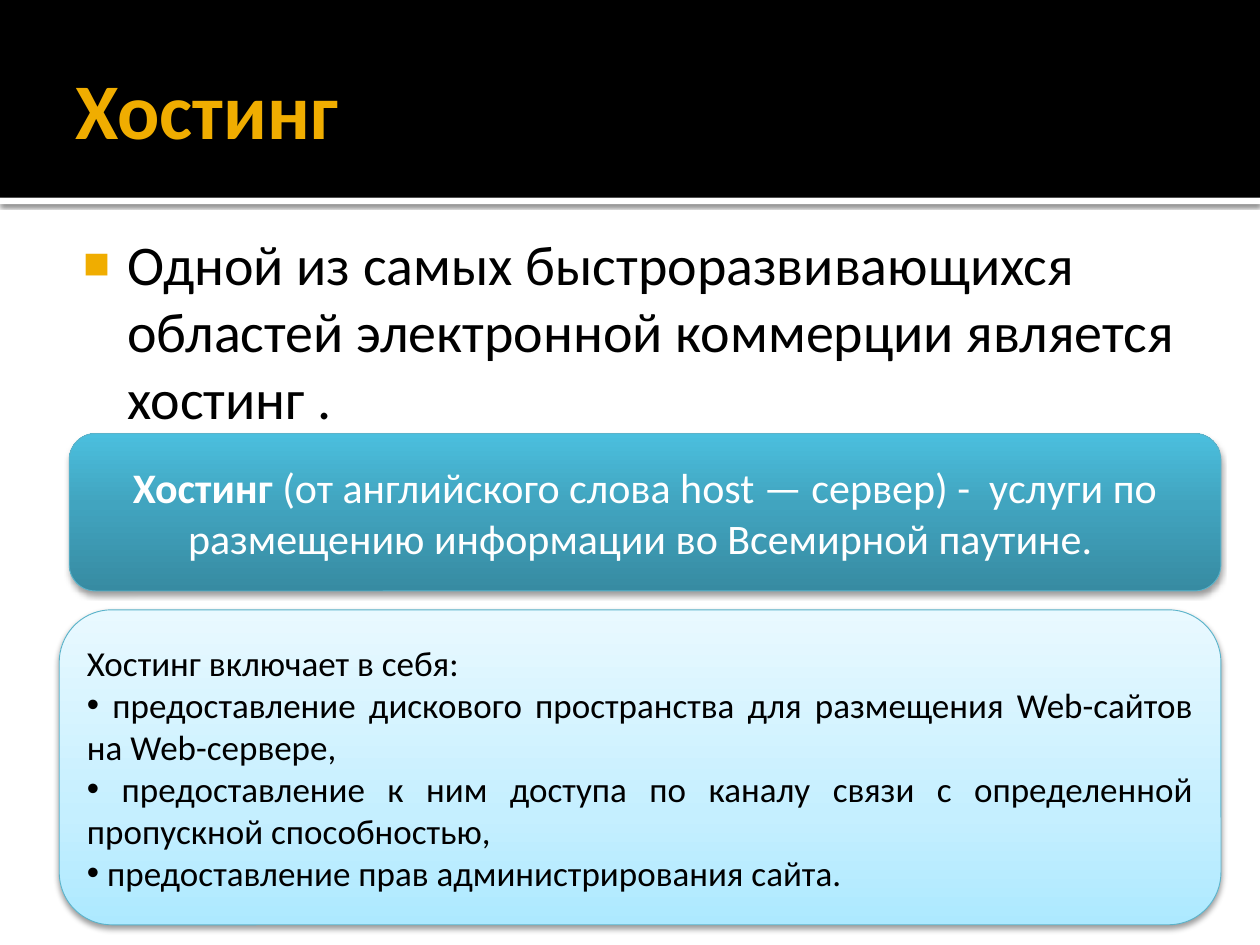
from lxml import etree
from pptx import Presentation
from pptx.dml.color import RGBColor
from pptx.enum.shapes import MSO_SHAPE
from pptx.enum.text import MSO_ANCHOR, MSO_AUTO_SIZE, PP_ALIGN
from pptx.oxml.ns import qn
from pptx.util import Inches, Pt

RECTANGLE = MSO_SHAPE.RECTANGLE
ROUNDED = MSO_SHAPE.ROUNDED_RECTANGLE
MIDDLE, TOP = MSO_ANCHOR.MIDDLE, MSO_ANCHOR.TOP
LEFT, CENTER, JUSTIFY = PP_ALIGN.LEFT, PP_ALIGN.CENTER, PP_ALIGN.JUSTIFY
NO_AUTOFIT = MSO_AUTO_SIZE.NONE
GOLD, BLACK, WHITE = "F0AD00", "000000", "FFFFFF"


def add_text(paragraph, text, size, color, bold=False, align=LEFT, bullet=None):
    paragraph.alignment = align
    paragraph.space_before = Pt(0)
    run = paragraph.add_run()
    run.text = text
    run.font.name = "Calibri"
    run.font.size = Pt(size)
    run.font.bold = bold
    run.font.color.rgb = RGBColor.from_string(color)
    if bullet:
        properties = paragraph._p.get_or_add_pPr()
        etree.SubElement(properties, qn("a:buFont"), typeface="Arial")
        etree.SubElement(properties, qn("a:buChar"), char=bullet)


def add_shadow(shape, opacity, blur, distance):
    shape.shadow.inherit = False
    effects = shape._element.spPr.find(qn("a:effectLst"))
    shadow = etree.SubElement(effects, qn("a:outerShdw"), blurRad=str(Pt(blur)),
                              dist=str(Pt(distance)), dir="5400000", rotWithShape="0")
    color = etree.SubElement(shadow, qn("a:srgbClr"), val=BLACK)
    etree.SubElement(color, qn("a:alpha"), val=str(opacity * 1000))


presentation = Presentation()
presentation.slide_width = Inches(10)
presentation.slide_height = Inches(7.5)
slide = presentation.slides.add_slide(presentation.slide_layouts[1])
shapes = slide.shapes

bands = []
for top, height, color in [(1.57, 0.05, WHITE), (0, 1.57, BLACK)]:
    band = shapes.add_shape(RECTANGLE, 0, Inches(top), Inches(10), Inches(height))
    band.fill.solid()
    band.fill.fore_color.rgb = RGBColor.from_string(color)
    band.line.fill.background()
    band.shadow.inherit = False
    bands.append(band)
add_shadow(bands[0], 60, 2.5, 0.8)
for band in reversed(bands):
    shapes._spTree.insert(2, band._element)

title, body = shapes.title, slide.placeholders[1]
for placeholder, box, insets, anchor in [
    (title, (0.5, 0.17, 9, 1.37), (0.1, 0.05, 0.05, 0.05), MIDDLE),
    (body, (0.47, 1.72, 9, 1.89), (0.06, 0.1, 0.1, 0.05), TOP),
]:
    placeholder.left, placeholder.top, placeholder.width, placeholder.height = map(Inches, box)
    frame = placeholder.text_frame
    frame.margin_left, frame.margin_top, frame.margin_right, frame.margin_bottom = map(Inches, insets)
    frame.vertical_anchor = anchor
    frame.auto_size = NO_AUTOFIT
    frame.word_wrap = True

add_text(title.text_frame.paragraphs[0], "Хостинг", 45, GOLD, bold=True)

body_paragraph = body.text_frame.paragraphs[0]
body_properties = body_paragraph._p.get_or_add_pPr()
body_properties.set("marL", str(Inches(0.48)))
body_properties.set("indent", str(Inches(-0.35)))
bullet_color = etree.SubElement(body_properties, qn("a:buClr"))
etree.SubElement(bullet_color, qn("a:srgbClr"), val=GOLD)
etree.SubElement(body_properties, qn("a:buSzPct"), val="80000")
add_text(body_paragraph,
         "Одной из самых быстроразвивающихся областей электронной коммерции является хостинг .",
         32, BLACK, bullet="■")

panels = []
for box, stops, blur in [
    ((0.55, 3.44, 9.14, 1.25), [(0, "378BA2"), (55, "41A4BF"), (100, "4BBFDE")], 3.1),
    ((0.47, 4.84, 9.22, 2.5), [(0, "ADE9FF"), (35, "C5EFFF"), (100, "E9F9FF")], 3.5),
]:
    panel = shapes.add_shape(ROUNDED, *map(Inches, box))
    panel.fill.gradient()
    panel.fill.gradient_angle = 90
    stop_list = panel._element.spPr.find(".//" + qn("a:gsLst"))
    stop_list.clear()
    for position, color in stops:
        stop = etree.SubElement(stop_list, qn("a:gs"), pos=str(position * 1000))
        etree.SubElement(stop, qn("a:srgbClr"), val=color)
    panel.line.color.rgb = RGBColor.from_string("5BB3CA")
    panel.line.width = Pt(0.5)
    add_shadow(panel, 38, blur, 2)
    panel.text_frame.word_wrap = True
    panel.text_frame.vertical_anchor = MIDDLE
    panels.append(panel)
definition, services = panels

definition_paragraph = definition.text_frame.paragraphs[0]
add_text(definition_paragraph, "Хостинг ", 24, WHITE, bold=True, align=CENTER)
add_text(definition_paragraph,
         "(от английского слова host — сервер) -  услуги по размещению информации во Всемирной паутине. ",
         24, WHITE, align=CENTER)

add_text(services.text_frame.paragraphs[0], "Хостинг включает в себя:", 20, BLACK, align=JUSTIFY)
for service in [
    " предоставление дискового пространства для размещения Web-сайтов на Web-сервере, ",
    " предоставление к ним доступа по каналу связи с определенной пропускной способностью,",
    " предоставление прав администрирования сайта.",
]:
    add_text(services.text_frame.add_paragraph(), service, 20, BLACK, align=JUSTIFY, bullet="•")

presentation.save("out.pptx")
